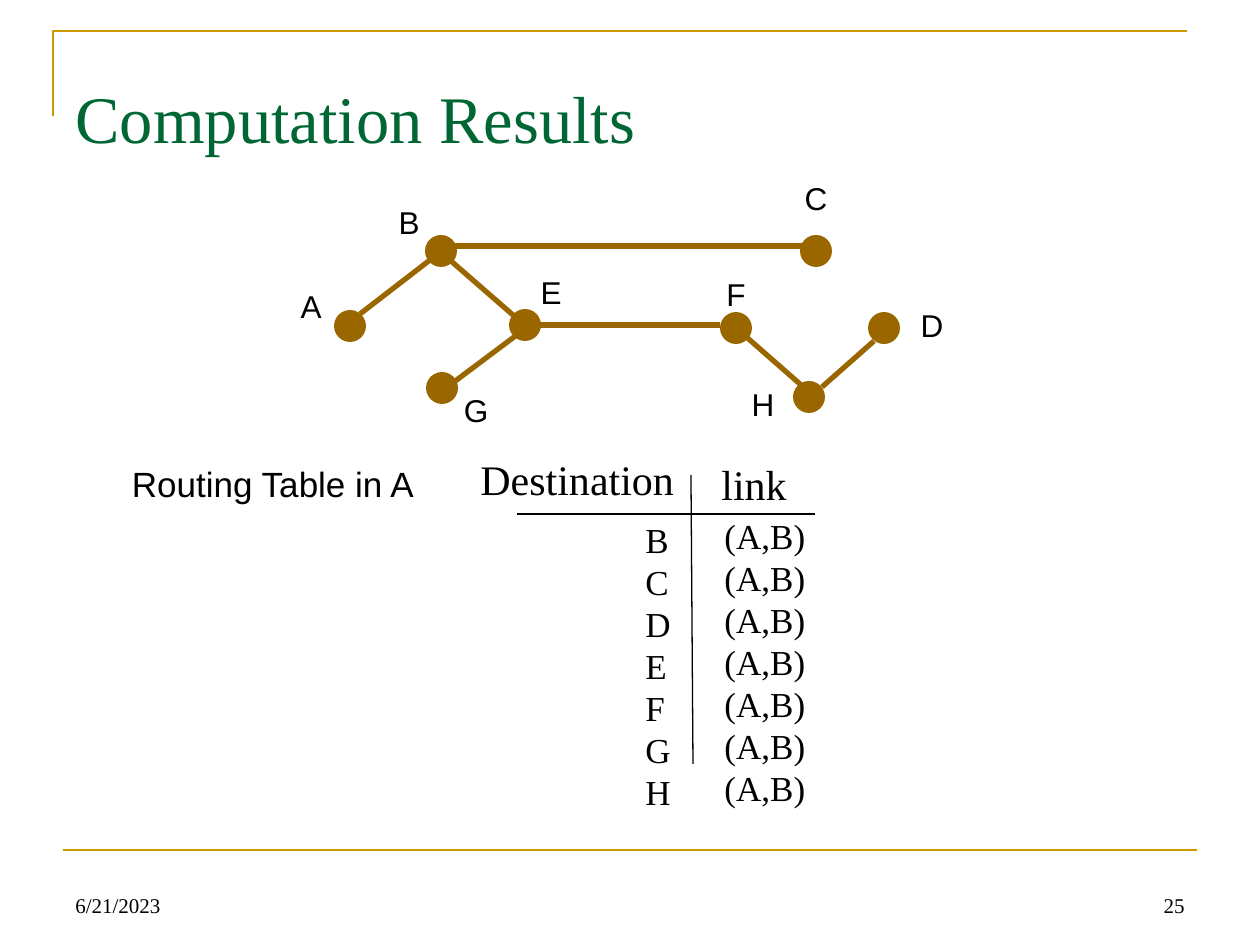
import pptx
import pptx.util
import pptx.dml.color
import pptx.enum.shapes
import pptx.enum.text
import pptx.oxml.ns
from lxml import etree

RGBColor = pptx.dml.color.RGBColor
Align = pptx.enum.text.PP_ALIGN
Anchor = pptx.enum.text.MSO_ANCHOR

GOLD = RGBColor(0xCC, 0x99, 0x00)
GREEN = RGBColor(0x00, 0x66, 0x33)
BROWN = RGBColor(0x99, 0x66, 0x00)
BLACK = RGBColor(0x00, 0x00, 0x00)
SERIF, SANS = "Times New Roman", "Arial"

# Content, in px
TITLE = "Computation Results"
NODES = {  # name: (dot centre, label centre)
    "A": ((350, 326), (311, 306)),
    "B": ((441, 251), (409, 222)),
    "G": ((442, 388), (476, 410)),
    "E": ((525, 325), (551, 292)),
    "F": ((736, 328), (736, 294)),
    "H": ((809, 397), (763, 404)),
    "D": ((884, 328), (932, 325)),
    "C": ((816, 251), (816, 198)),
}
LINKS = [  # ends of each link
    ((360, 314), (430, 260)),  # A to B
    ((513, 315), (451, 261)),  # E to B
    ((454, 382), (518, 334)),  # G to E
    ((539, 325), (720, 325)),  # E to F
    ((743, 334), (808, 391)),  # F to H
    ((822, 387), (874, 341)),  # H to D
    ((454, 246), (804, 246)),  # B to C
]
ROUTES = [(name, "(A,B)") for name in "BCDEFGH"]
DOT, LABEL_WIDTH, LABEL_HEIGHT = 32, 54, 50
PX_PER_INCH = 126


def px(length):
    return pptx.util.Emu(round(length * 914400 / PX_PER_INCH))


def format_text(frame, lines, size, font, color, align, anchor):
    frame.text = "\n".join(lines)
    frame.vertical_anchor = anchor
    for para in frame.paragraphs:
        para.alignment = align
        para.font.size = pptx.util.Pt(size)
        para.font.name = font
        para.font.color.rgb = color


def add_text(page, left, top, width, height, lines, size, font=SERIF,
             align=Align.LEFT, anchor=Anchor.TOP, wrap=False):
    box = page.shapes.add_textbox(px(left), px(top), px(width), px(height))
    format_text(box.text_frame, lines, size, font, BLACK, align, anchor)
    box.text_frame.word_wrap = wrap
    return box


def add_line(page, start, end, color, weight):
    line = page.shapes.add_connector(
        pptx.enum.shapes.MSO_CONNECTOR.STRAIGHT,
        px(start[0]), px(start[1]), px(end[0]), px(end[1]))
    line.line.color.rgb = color
    line.line.width = pptx.util.Pt(weight)
    etree.SubElement(line._element.spPr, pptx.oxml.ns.qn("a:effectLst"))


def add_frame(page):
    builder = page.shapes.build_freeform(px(53), px(116))
    builder.add_line_segments(
        [(px(53), px(31)), (px(1187), px(31))], close=False)
    corner = builder.convert_to_shape()
    corner.shadow.inherit = False
    corner.fill.background()
    corner.line.color.rgb = GOLD
    corner.line.width = pptx.util.Pt(1.5)
    add_line(page, (63, 850), (1197, 850), GOLD, 1.5)


def add_title(page):
    title = page.shapes.title
    title.left, title.top = px(63), px(38)
    title.width, title.height = px(1134), px(157)
    format_text(title.text_frame, [TITLE], 38, SERIF, GREEN,
                Align.LEFT, Anchor.MIDDLE)


def add_routing_table(page):
    add_line(page, (691, 475), (693, 764), BLACK, 0.75)
    add_line(page, (517, 514), (815, 514), BLACK, 0.75)
    names, links = zip(*ROUTES)
    for left, top, width, lines in ((633, 512, 50, names),
                                    (712, 508, 106, links)):
        box = add_text(page, left, top, width, 306, lines, 20)
        for para in box.text_frame.paragraphs:
            para.line_spacing = pptx.util.Pt(24)
    add_text(page, 468, 447, 219, 63, ["Destination"], 24)
    add_text(page, 709, 452, 91, 63, ["link"], 24)
    add_text(page, 116, 456, 314, 54, ["Routing Table in A"], 20, SANS,
             Align.CENTER)


def add_network(page):
    for (x, y), _ in NODES.values():
        dot = page.shapes.add_shape(
            pptx.enum.shapes.MSO_SHAPE.OVAL,
            px(x - DOT / 2), px(y - DOT / 2), px(DOT), px(DOT))
        dot.shadow.inherit = False
        dot.fill.solid()
        dot.fill.fore_color.rgb = BROWN
        dot.line.fill.background()
    for start, end in LINKS:
        add_line(page, start, end, BROWN, 3)
    for name, (_, (x, y)) in NODES.items():
        add_text(page, x - LABEL_WIDTH / 2, y - LABEL_HEIGHT / 2,
                 LABEL_WIDTH, LABEL_HEIGHT, [name], 18, SANS,
                 Align.CENTER, wrap=True)


def add_footer(page):
    for left, words, align in ((63, "6/21/2023", Align.LEFT),
                               (903, "25", Align.RIGHT)):
        add_text(page, left, 861, 294, 63, [words], 12, SERIF, align,
                 Anchor.BOTTOM, wrap=True)


def main():
    deck = pptx.Presentation()
    deck.slide_width, deck.slide_height = px(1260), px(945)
    page = deck.slides.add_slide(deck.slide_layouts[5])  # title only
    add_frame(page)
    add_title(page)
    add_routing_table(page)
    add_network(page)
    add_footer(page)
    deck.save("out.pptx")


if __name__ == "__main__":
    main()
